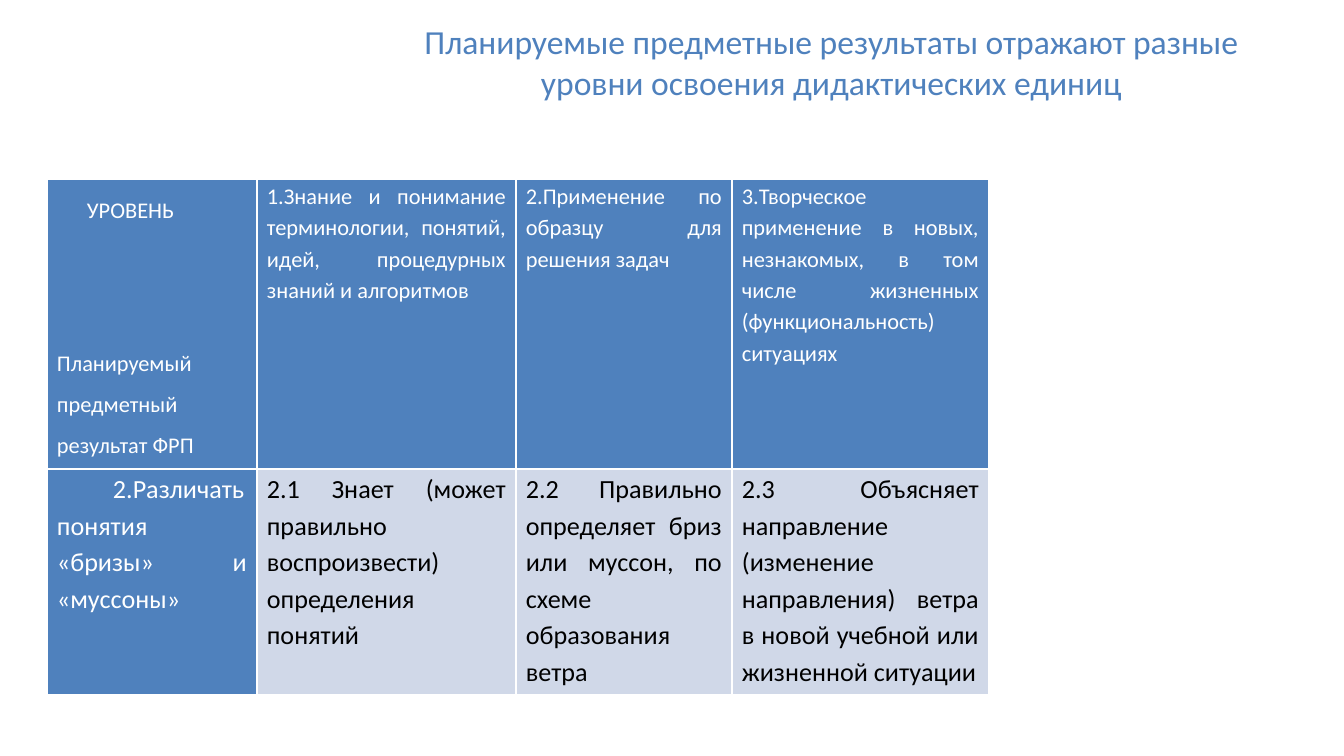
import pptx
import pptx.dml.color
import pptx.enum.text
import pptx.oxml.ns
import pptx.util
from lxml import etree

SCALE = 914400 / 134.4
FONT = "Calibri"
BLUE, PALE, WHITE, BLACK = "4F81BD", "D0D8E8", "FFFFFF", "000000"
ALIGN = pptx.enum.text.PP_ALIGN
ANCHOR = pptx.enum.text.MSO_ANCHOR
COLUMNS = [210, 259, 216, 257]
ROWS = [290, 226]
HEADERS = [
    "1.Знание и понимание терминологии, понятий, идей, процедурных знаний и алгоритмов",
    "2.Применение по образцу для решения задач",
    "3.Творческое применение в новых, незнакомых, в том числе жизненных (функциональность) ситуациях",
]
RESULTS = [
    "2.1 Знает (может правильно воспроизвести) определения понятий",
    "2.2 Правильно определяет бриз или муссон, по схеме образования ветра",
    "2.3 Объясняет направление (изменение направления) ветра в новой учебной или жизненной ситуации",
]
CORNER = [
    ("УРОВЕНЬ", {"line_spacing": 1.5}, 30),
    ("Планируемый", {"line_spacing": 1.15, "space_before": pptx.util.Pt(65)}, 0),
    ("предметный результат ФРП", {"line_spacing": 1.5}, 0),
]


def px(n):
    """Turn pixels into EMU."""
    return pptx.util.Emu(round(n * SCALE))


def rgb(color):
    """Turn a hex string into a colour."""
    return pptx.dml.color.RGBColor.from_string(color)


def apply(obj, values):
    """Set the attributes of an object from a dict."""
    for name, value in values.items():
        setattr(obj, name, value)


def write(p, text, size, color, values, indent=0):
    """Write one formatted run into a paragraph."""
    apply(p, values)
    if indent:
        p._p.get_or_add_pPr().set("indent", str(px(indent)))
    r = p.add_run()
    r.text = text
    apply(r.font, {"name": FONT, "size": pptx.util.Pt(size), "bold": False})
    r.font.color.rgb = rgb(color)


def add_borders(cell, color):
    """Draw a one-point border on every side of a cell."""
    tcPr = cell._tc.get_or_add_tcPr()
    for side in ("lnL", "lnR", "lnT", "lnB"):
        ln = etree.SubElement(tcPr, pptx.oxml.ns.qn("a:" + side), w=str(pptx.util.Pt(1)))
        fill = etree.SubElement(ln, pptx.oxml.ns.qn("a:solidFill"))
        etree.SubElement(fill, pptx.oxml.ns.qn("a:srgbClr"), val=color)


def fill_cell(cell, paragraphs, size, color, fill, top=0):
    """Style a cell and write its justified paragraphs."""
    apply(cell, {"margin_left": px(10), "margin_right": px(10),
                 "margin_top": px(top), "margin_bottom": 0,
                 "vertical_anchor": ANCHOR.TOP})
    add_borders(cell, WHITE)
    cell.fill.solid()
    cell.fill.fore_color.rgb = rgb(fill)
    tf = cell.text_frame
    for i, (text, values, indent) in enumerate(paragraphs):
        p = tf.add_paragraph() if i else tf.paragraphs[0]
        write(p, text, size, color, {"alignment": ALIGN.JUSTIFY, **values}, indent)


def add_title(s, x, y, w, h):
    """Place the slide title in its placeholder."""
    sp = s.shapes.title
    apply(sp, {"left": px(x), "top": px(y), "width": px(w), "height": px(h)})
    tf = sp.text_frame
    apply(tf, {"word_wrap": True, "vertical_anchor": ANCHOR.MIDDLE})
    write(tf.paragraphs[0],
          "Планируемые предметные результаты отражают разные уровни освоения дидактических единиц",
          18, BLUE, {"alignment": ALIGN.CENTER})


def add_levels(s, x, y):
    """Build the table of learning levels from its top left corner."""
    table = s.shapes.add_table(len(ROWS), len(COLUMNS), px(x), px(y),
                               px(sum(COLUMNS)), px(sum(ROWS))).table
    apply(table, {"first_row": False, "horz_banding": False})
    for column, width in zip(table.columns, COLUMNS):
        column.width = px(width)
    for row, height in zip(table.rows, ROWS):
        row.height = px(height)
    spaced = {"line_spacing": 1.15}
    fill_cell(table.cell(0, 0), CORNER, 12, WHITE, BLUE, top=5)
    fill_cell(table.cell(1, 0), [("2.Различать понятия «бризы» и «муссоны»", spaced, 56)],
              14, WHITE, BLUE)
    for i, (header, result) in enumerate(zip(HEADERS, RESULTS), 1):
        fill_cell(table.cell(0, i), [(header, spaced, 0)], 12, WHITE, BLUE)
        fill_cell(table.cell(1, i), [(result, spaced, 0)], 14, BLACK, PALE)


def main():
    """Build and save the slide."""
    prs = pptx.Presentation()
    apply(prs, {"slide_width": px(1344), "slide_height": px(756)})
    s = prs.slides.add_slide(prs.slide_layouts[5])
    add_title(s, 376, 19, 911, 85)
    add_levels(s, 47, 179)
    prs.save("out.pptx")


if __name__ == "__main__":
    main()
